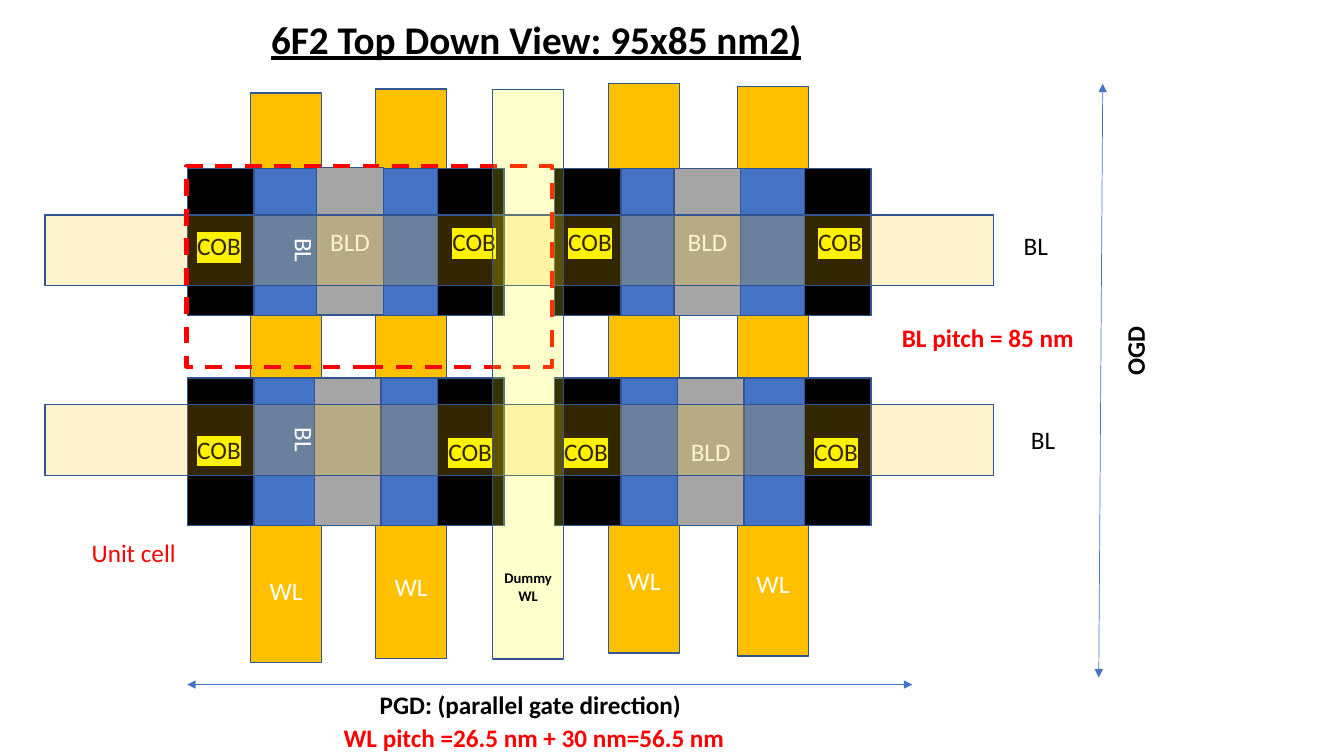
import dataclasses
import itertools

import lxml.etree
import pptx
import pptx.dml.color
import pptx.enum.dml
import pptx.enum.shapes
import pptx.enum.text
import pptx.oxml.ns
import pptx.util

Cm = pptx.util.Cm
Pt = pptx.util.Pt
rgb = pptx.dml.color.RGBColor.from_string
qn = pptx.oxml.ns.qn
Align = pptx.enum.text.PP_ALIGN
Anchor = pptx.enum.text.MSO_ANCHOR


@dataclasses.dataclass
class Theme:
    font: str = "Calibri"
    gold: str = "FFC000"
    blue: str = "4472C4"
    edge: str = "325491"
    gray: str = "A5A5A5"
    black: str = "000000"
    white: str = "FFFFFF"
    red: str = "FF0000"
    yellow: str = "FFFF00"
    head: float = 28
    body: float = 18
    small: float = 10.5


theme = Theme()


def write(shape, text, color, size=theme.body, bold=False, align=Align.LEFT,
          anchor=Anchor.TOP, mark=None):
    frame = shape.text_frame
    frame.word_wrap = True
    frame.vertical_anchor = anchor
    line = frame.paragraphs[0]
    line.alignment = align
    run = line.add_run()
    run.text = text
    font = run.font
    font.size, font.bold, font.name = Pt(size), bold, theme.font
    font.color.rgb = rgb(color)
    if mark:
        light = lxml.etree.Element(qn("a:highlight"))
        lxml.etree.SubElement(light, qn("a:srgbClr"), val=mark)
        run._r.rPr.find(qn("a:latin")).addprevious(light)
    return run


def block(x, y, w, h, fill=None, alpha=None):
    shape = slide.shapes.add_shape(
        pptx.enum.shapes.MSO_SHAPE.RECTANGLE, Cm(x), Cm(y), Cm(w), Cm(h))
    shape.shadow.inherit = False
    shape.line.color.rgb = rgb(theme.edge)
    shape.line.width = Pt(1)
    if fill:
        shape.fill.solid()
        shape.fill.fore_color.rgb = rgb(fill)
    else:
        shape.fill.background()
    if alpha:
        tone = shape._element.spPr.find(qn("a:solidFill"))[0]
        lxml.etree.SubElement(tone, qn("a:alpha"), val=str(alpha * 1000))
    return shape


deck = pptx.Presentation()
deck.slide_width, deck.slide_height = Cm(33.87), Cm(19.05)
slide = deck.slides.add_slide(deck.slide_layouts[5])

# Title
title = slide.shapes.title
title.left, title.top, title.width, title.height = Cm(6.58), Cm(0.25), Cm(17), Cm(2.24)
run = write(title, "6F2 Top Down View: 95x85 nm2)", theme.black, theme.head, True)
run.font.underline = True

# Word lines
strip, tall = 1.78, 14.35
for x, y in [(18.59, 2.18), (15.34, 2.11), (9.47, 2.24), (6.32, 2.34)]:
    gate = block(x, y, strip, tall, theme.gold)
    gate.text_frame.margin_bottom = Cm(1.44)
    write(gate, "WL", theme.white, align=Align.CENTER, anchor=Anchor.BOTTOM)

# Active areas with a contact at each end
wide, high, pad = 7.98, 3.71, 1.68
cells = list(itertools.product((4.72, 13.97), (4.24, 9.53)))
for x, y in cells:
    block(x, y, wide, high, theme.blue)
for x, y in cells:
    for left in (x, x + wide - pad):
        block(left, y, pad, high, theme.black)

# Contact labels
for x, y in [(20.37, 5.59), (14.07, 5.59), (13.97, 10.87), (20.27, 10.87),
             (11.05, 10.87), (11.15, 5.59), (4.72, 5.69), (4.72, 10.82)]:
    label = slide.shapes.add_textbox(Cm(x), Cm(y), Cm(3.15), Cm(1.02))
    write(label, "COB", theme.black, mark=theme.yellow)

# Bit line contacts
for x, y, text in [(7.98, 4.22, "BLD"), (7.92, 9.53, ""),
                   (17.07, 9.53, "BLD"), (16.99, 4.24, "BLD")]:
    drain = block(x, y, pad, high, theme.gray)
    if text:
        write(drain, text, theme.white, align=Align.CENTER, anchor=Anchor.MIDDLE)

# Bit lines, turned to run across
for y in (-5.64, -0.86):
    bar = block(12.19, y, strip, 23.9, theme.gold, 20)
    bar.rotation = 90
    bar.text_frame.margin_bottom = Cm(6.17)
    write(bar, "BL", theme.white, align=Align.CENTER, anchor=Anchor.BOTTOM)

# Unit cell outline
unit = block(4.7, 4.19, 9.22, 5.05)
unit.line.color.rgb = rgb(theme.red)
unit.line.width = Pt(3)
unit.line.dash_style = pptx.enum.dml.MSO_LINE.DASH

# Captions
for x, y, w, text, color, bold in [
        (9.32, 17.25, 13.46, "PGD: (parallel gate direction)", theme.black, True),
        (25.55, 5.69, 1.65, "BL", theme.black, False),
        (25.73, 10.57, 1.65, "BL", theme.black, False),
        (2.06, 13.41, 3.84, "Unit cell", theme.red, False),
        (22.48, 8, 7.77, "BL pitch = 85 nm", theme.red, True),
        (8.41, 18.08, 11.56, "WL pitch =26.5 nm + 30 nm=56.5 nm", theme.red, True)]:
    note = slide.shapes.add_textbox(Cm(x), Cm(y), Cm(w), Cm(1.02))
    write(note, text, color, bold=bold)

side = slide.shapes.add_textbox(Cm(21.87), Cm(8.33), Cm(13.46), Cm(1.02))
side.rotation = 270
write(side, "OGD", theme.black, bold=True, align=Align.CENTER)

# Direction arrows
for ends in [(4.72, 17.25, 22.99, 17.25), (27.79, 2.11, 27.69, 17.07)]:
    arrow = slide.shapes.add_connector(
        pptx.enum.shapes.MSO_CONNECTOR.STRAIGHT, *map(Cm, ends))
    arrow.line.color.rgb = rgb(theme.blue)
    arrow.line.width = Pt(0.5)
    for tip in ("a:headEnd", "a:tailEnd"):
        lxml.etree.SubElement(arrow.line._get_or_add_ln(), qn(tip), type="triangle")
    lxml.etree.SubElement(arrow._element.spPr, qn("a:effectLst"))

# Dummy word line
dummy = block(12.42, 2.26, strip, tall, theme.yellow, 20)
dummy.text_frame.margin_bottom = Cm(1.38)
write(dummy, "Dummy WL", theme.black, theme.small, True, Align.CENTER, Anchor.BOTTOM)

deck.save("out.pptx")
